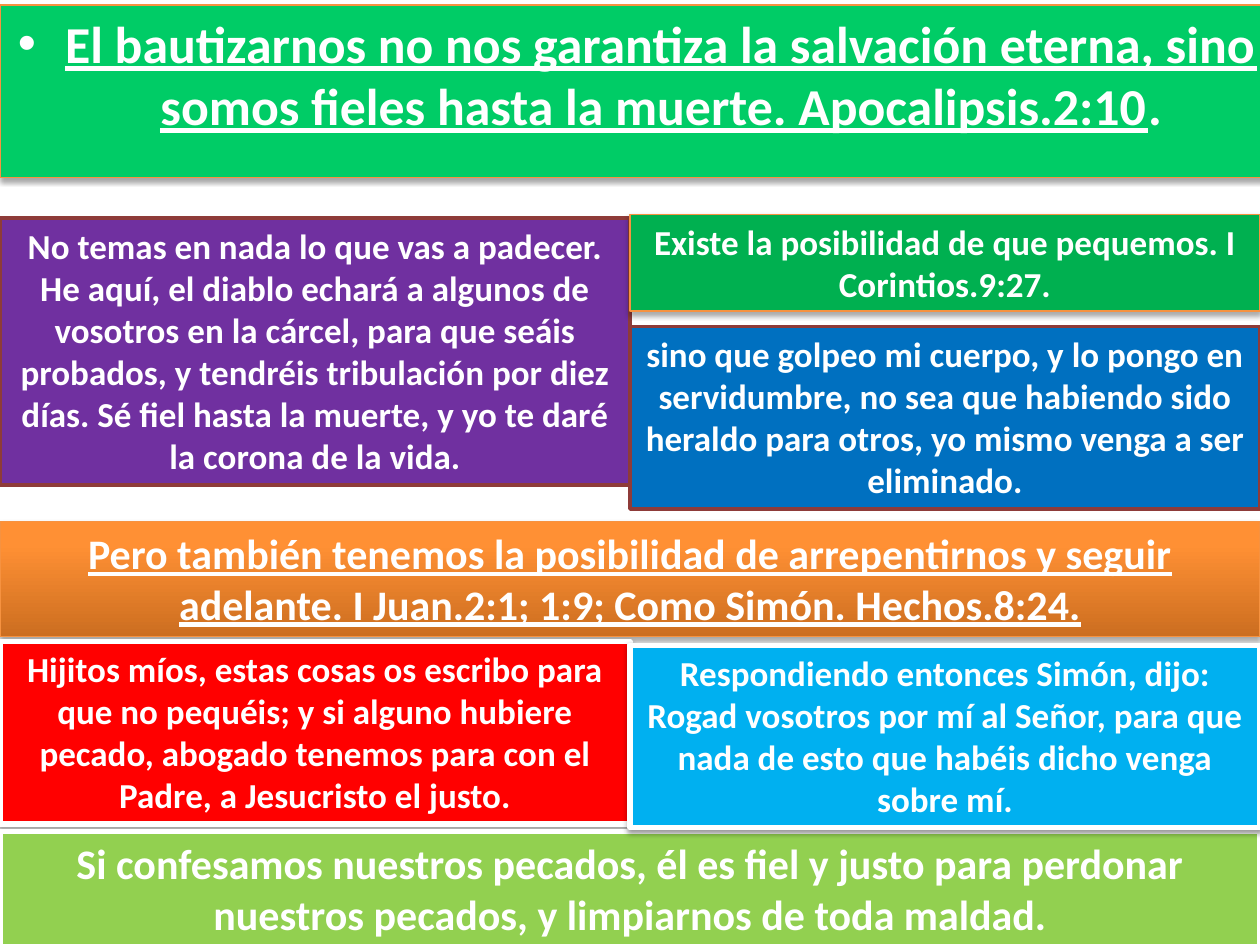
from copy import deepcopy
from dataclasses import dataclass
from typing import Optional

from pptx import Presentation
from pptx.dml.color import RGBColor
from pptx.enum.text import MSO_ANCHOR as Anchor, MSO_AUTO_SIZE as Fit, PP_ALIGN as Align
from pptx.oxml import parse_xml
from pptx.oxml.ns import nsdecls, qn
from pptx.util import Inches, Pt

WHITE = RGBColor(0xFF, 0xFF, 0xFF)
MINT = RGBColor(0x00, 0xCC, 0x66)
PURPLE = RGBColor(0x70, 0x30, 0xA0)
GREEN = RGBColor(0x00, 0xB0, 0x50)
BLUE = RGBColor(0x00, 0x70, 0xC0)
RED = RGBColor(0xFF, 0x00, 0x00)
LIME = RGBColor(0x92, 0xD0, 0x50)
SKY = RGBColor(0x00, 0xB0, 0xF0)
ORANGE = RGBColor(0xF6, 0x92, 0x40)
MAROON = RGBColor(0x8E, 0x3B, 0x39)
BLEND = (
    (0, RGBColor(0xCC, 0x6E, 0x20)),
    (0.8, RGBColor(0xFF, 0x90, 0x34)),
    (1, RGBColor(0xFF, 0x91, 0x36)),
)

WIDE = 10
HALF = WIDE / 2


@dataclass(frozen=True)
class Look:
    line: RGBColor
    width: float
    alpha: int = 0
    drop: float = 0


SOFT = Look(ORANGE, 0.75, 35, 1.8)
FLAT = Look(MAROON, 2)
FRAME = Look(WHITE, 3, 38, 1.6)


@dataclass(frozen=True)
class Panel:
    left: float
    top: float
    width: float
    height: float
    fill: Optional[RGBColor]
    look: Look
    text: str
    size: float = 20
    under: Optional[bool] = None


HEAD = Panel(0, 0.04, 10.12, 1.37, MINT, SOFT,
             "El bautizarnos no nos garantiza la salvación eterna, sino "
             "somos fieles hasta la muerte. Apocalipsis.2:10", 29.6, True)

PANELS = (
    Panel(0, 1.73, HALF, 2.12, PURPLE, FLAT,
          "No temas en nada lo que vas a padecer. He aquí, el diablo echará a "
          "algunos de vosotros en la cárcel, para que seáis probados, y tendréis "
          "tribulación por diez días. Sé fiel hasta la muerte, y yo te daré la "
          "corona de la vida."),
    Panel(HALF, 1.7, HALF, 0.77, GREEN, SOFT,
          "Existe la posibilidad de que pequemos. I Corintios.9:27."),
    Panel(HALF, 2.59, HALF, 1.45, BLUE, FLAT,
          "sino que golpeo mi cuerpo, y lo pongo en servidumbre, no sea que "
          "habiendo sido heraldo para otros, yo mismo venga a ser eliminado."),
    Panel(0, 4.14, WIDE, 0.91, None, SOFT,
          "Pero también tenemos la posibilidad de arrepentirnos y seguir "
          "adelante. I Juan.2:1; 1:9; Como Simón. Hechos.8:24.", 24, True),
    Panel(0, 5.09, HALF, 1.45, RED, FRAME,
          "Hijitos míos, estas cosas os escribo para que no pequéis; y si alguno "
          "hubiere pecado, abogado tenemos para con el Padre, a Jesucristo el justo."),
    Panel(0, 6.6, WIDE, 0.91, LIME, FRAME,
          "Si confesamos nuestros pecados, él es fiel y justo para perdonar "
          "nuestros pecados, y limpiarnos de toda maldad.", 24),
    Panel(HALF, 5.12, HALF, 1.45, SKY, FRAME,
          "Respondiendo entonces Simón, dijo: Rogad vosotros por mí al Señor, "
          "para que nada de esto que habéis dicho venga sobre mí."),
)


def apply(item, form: dict) -> None:
    for name, value in form.items():
        setattr(item, name, value)


def blend(shape) -> None:
    shape.fill.gradient()
    shape.fill.gradient_angle = 90
    stops = shape._element.spPr.find(".//" + qn("a:gsLst"))
    stops.insert(1, deepcopy(stops[0]))
    for stop, (place, color) in zip(shape.fill.gradient_stops, BLEND):
        stop.position = place
        stop.color.rgb = color


def shade(shape, look: Look) -> None:
    shape.shadow.inherit = False
    if look.alpha:
        shape._element.spPr.find(qn("a:effectLst")).append(parse_xml(
            f'<a:outerShdw {nsdecls("a")} blurRad="{Pt(3.1)}" dist="{Pt(look.drop)}" '
            f'dir="5400000" rotWithShape="0"><a:srgbClr val="000000">'
            f'<a:alpha val="{look.alpha * 1000}"/></a:srgbClr></a:outerShdw>'))


def write(para, text: str, size: float, under: Optional[bool]) -> None:
    run = para.add_run()
    run.text = text
    apply(run.font, {"name": "Calibri", "size": Pt(size), "bold": True,
                     "underline": under})
    run.font.color.rgb = WHITE


def dress(shape, panel: Panel, fit: Fit) -> None:
    apply(shape, {"left": Inches(panel.left), "top": Inches(panel.top),
                  "width": Inches(panel.width), "height": Inches(panel.height)})
    if panel.fill is None:
        blend(shape)
    else:
        shape.fill.solid()
        shape.fill.fore_color.rgb = panel.fill
    shape.line.color.rgb = panel.look.line
    shape.line.width = Pt(panel.look.width)
    shade(shape, panel.look)
    frame = shape.text_frame
    apply(frame, {"word_wrap": True, "auto_size": fit,
                  "vertical_anchor": Anchor.TOP})
    para = frame.paragraphs[0]
    para.alignment = Align.CENTER
    write(para, panel.text, panel.size, panel.under)


def main() -> None:
    deck = Presentation()
    apply(deck, {"slide_width": Inches(WIDE), "slide_height": Inches(7.5)})
    slide = deck.slides.add_slide(deck.slide_layouts[1])
    title = slide.shapes.title._element
    title.getparent().remove(title)

    head = slide.placeholders[1]
    dress(head, HEAD, Fit.NONE)
    write(head.text_frame.paragraphs[0], ".", HEAD.size, False)

    for panel in PANELS:
        box = slide.shapes.add_textbox(0, 0, 0, 0)
        dress(box, panel, Fit.SHAPE_TO_FIT_TEXT)
    deck.save("out.pptx")


if __name__ == "__main__":
    main()
